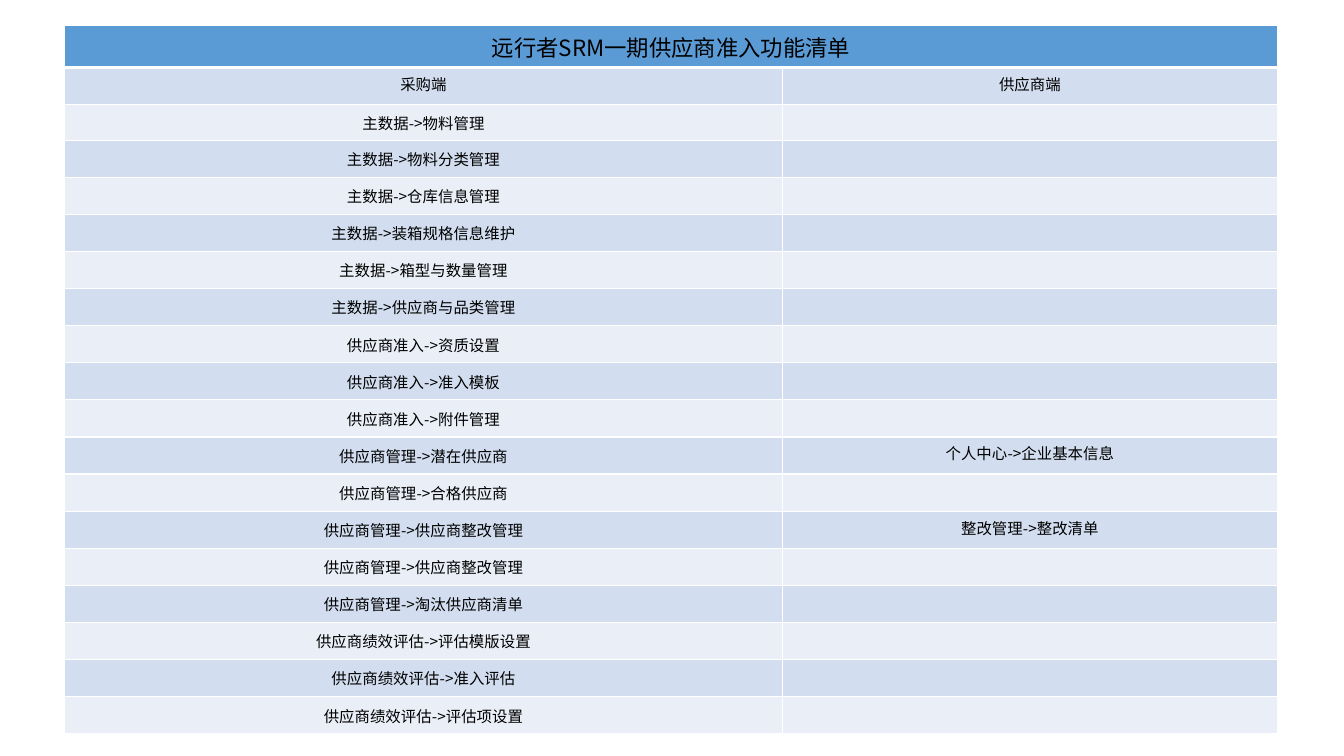
import pptx
import pptx.dml.color
import pptx.enum.text
import pptx.oxml.ns
import pptx.util
from lxml import etree

Inches = pptx.util.Inches
RGBColor = pptx.dml.color.RGBColor
qn = pptx.oxml.ns.qn

FONT = "Noto Sans CJK SC"
COLORS = {
    "title": "5B9BD5",
    "dark band": "D2DEEF",
    "light band": "EAEFF7",
    "border": "FFFFFF",
    "text": "000000",
}

TITLE = "远行者SRM一期供应商准入功能清单"
HEADINGS = ("采购端", "供应商端")
PURCHASER_FUNCTIONS = [
    ("主数据", ["物料管理", "物料分类管理", "仓库信息管理", "装箱规格信息维护",
             "箱型与数量管理", "供应商与品类管理"]),
    ("供应商准入", ["资质设置", "准入模板", "附件管理"]),
    ("供应商管理", ["潜在供应商", "合格供应商", "供应商整改管理", "供应商整改管理",
               "淘汰供应商清单"]),
    ("供应商绩效评估", ["评估模版设置", "准入评估", "评估项设置"]),
]
SUPPLIER_FUNCTIONS = {
    "供应商管理->潜在供应商": "个人中心->企业基本信息",
    "供应商管理->供应商整改管理": "整改管理->整改清单",
}


def add_borders(cell, top, bottom):
    """Draw white cell borders; top and bottom widths are in points."""
    properties = cell._tc.get_or_add_tcPr()
    for side, width in (("L", 1), ("R", 1), ("T", top), ("B", bottom)):
        line = etree.SubElement(properties, qn(f"a:ln{side}"), w=str(pptx.util.Pt(width)))
        fill = etree.SubElement(line, qn("a:solidFill"))
        etree.SubElement(fill, qn("a:srgbClr"), val=COLORS["border"])


def write_text(cell, text, size):
    paragraph = cell.text_frame.paragraphs[0]
    paragraph.alignment = pptx.enum.text.PP_ALIGN.CENTER
    font = paragraph.font
    font.size = pptx.util.Pt(size)
    font.color.rgb = RGBColor.from_string(COLORS["text"])
    font.name = FONT
    etree.SubElement(font._element, qn("a:ea"), typeface=FONT)
    if text:
        paragraph.add_run().text = text
    else:
        etree.SubElement(paragraph._p, qn("a:endParaRPr"), sz=str(size * 100))


rows = [(TITLE, ""), HEADINGS]
used = set()
for module, functions in PURCHASER_FUNCTIONS:
    for function in functions:
        entry = f"{module}->{function}"
        # Only the first of two equal entries has a supplier counterpart
        rows.append((entry, "" if entry in used else SUPPLIER_FUNCTIONS.get(entry, "")))
        used.add(entry)

presentation = pptx.Presentation()
presentation.slide_width = Inches(13.33)
presentation.slide_height = Inches(7.5)
slide = presentation.slides.add_slide(presentation.slide_layouts[6])

table = slide.shapes.add_table(
    len(rows), 2, Inches(0.64), Inches(0.25), Inches(12.03), Inches(6.99)
).table
table.first_row = False
table.horz_banding = False
table.columns[0].width = Inches(7.12)
table.columns[1].width = Inches(4.91)

top_heights = [0.38, 0.37, 0.35]
other_height = (6.99 - sum(top_heights)) / (len(rows) - len(top_heights))

for row_index, texts in enumerate(rows):
    is_title = row_index == 0
    table.rows[row_index].height = Inches(
        top_heights[row_index] if row_index < len(top_heights) else other_height
    )
    band = "title" if is_title else "dark band" if row_index % 2 else "light band"
    for column_index, text in enumerate(texts):
        cell = table.cell(row_index, column_index)
        add_borders(cell, top=3 if row_index == 1 else 1, bottom=3 if is_title else 1)
        cell.fill.solid()
        cell.fill.fore_color.rgb = RGBColor.from_string(COLORS[band])
        write_text(cell, text, 16 if is_title else 11)
        if row_index > 1 and column_index == 0:
            cell.vertical_anchor = pptx.enum.text.MSO_ANCHOR.MIDDLE
            cell.margin_left = cell.margin_right = 0
            cell.margin_top = cell.margin_bottom = 0

table.cell(0, 0).merge(table.cell(0, 1))

presentation.save("out.pptx")
